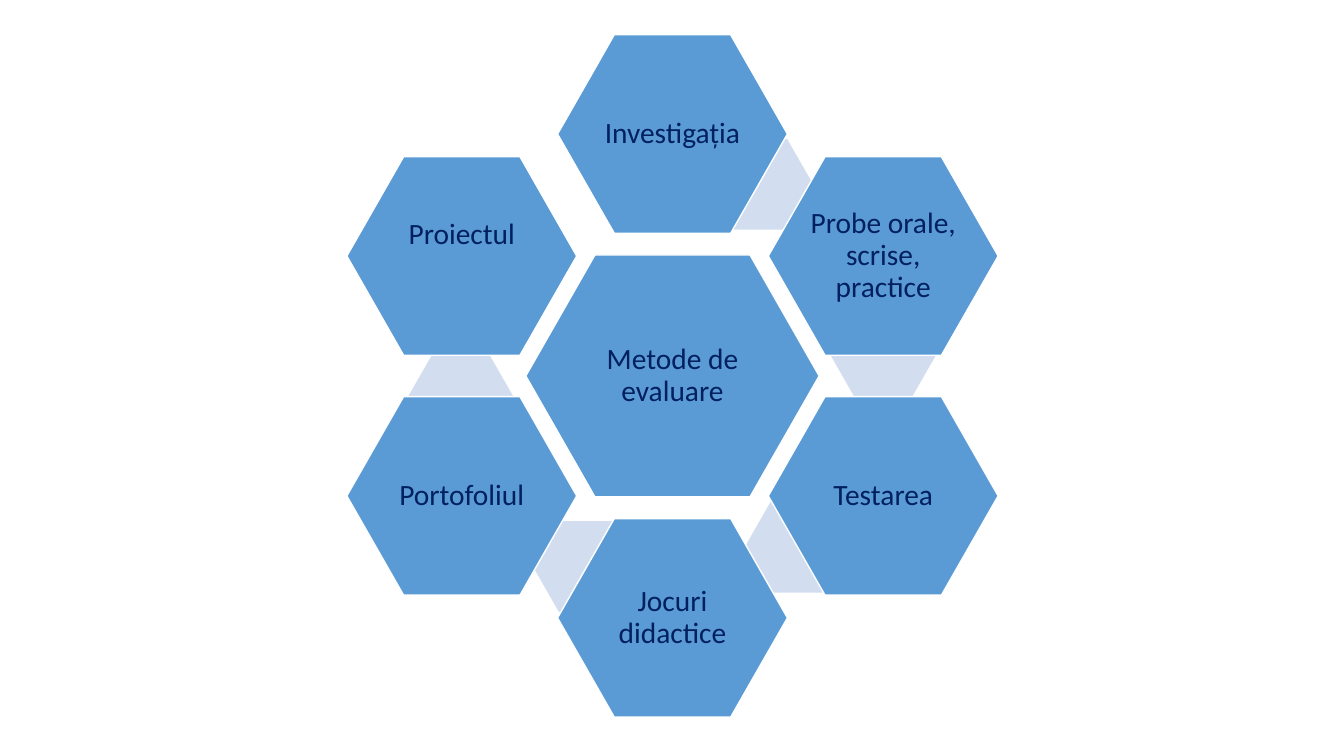
"""Build a slide with six evaluation methods in hexagons around a central one."""
from pptx import Presentation
from pptx.dml.color import RGBColor
from pptx.enum.shapes import MSO_SHAPE
from pptx.enum.text import MSO_ANCHOR, PP_ALIGN
from pptx.util import Inches, Pt

BLUE = RGBColor(0x5B, 0x9B, 0xD5)
PALE_BLUE = RGBColor(0xD2, 0xDE, 0xEF)
NAVY = RGBColor(0x00, 0x20, 0x60)
WHITE = RGBColor(0xFF, 0xFF, 0xFF)

CENTER_X, CENTER_Y = 6.67, 3.73
COLUMN, NEAR_ROW, FAR_ROW = 2.09, 1.19, 2.4
INSET = 0.03


def add_hexagon(center_x, center_y, width, height, fill):
    hexagon = slide.shapes.add_shape(
        MSO_SHAPE.HEXAGON, Inches(center_x - width / 2), Inches(center_y - height / 2),
        Inches(width), Inches(height))
    hexagon.adjustments[0] = 0.2857
    hexagon.shadow.inherit = False
    hexagon.fill.solid()
    hexagon.fill.fore_color.rgb = fill
    hexagon.line.fill.background()
    return hexagon


def add_method(name, center_x, center_y, width, height, bottom_inset=INSET):
    method = add_hexagon(center_x, center_y, width, height, BLUE)
    method.line.color.rgb = WHITE
    method.line.width = Pt(1)
    frame = method.text_frame
    frame.word_wrap = True
    frame.vertical_anchor = MSO_ANCHOR.MIDDLE
    frame.margin_left = frame.margin_right = frame.margin_top = Inches(INSET)
    frame.margin_bottom = Inches(bottom_inset)
    paragraph = frame.paragraphs[0]
    paragraph.alignment = PP_ALIGN.CENTER
    paragraph.line_spacing = 0.9
    run = paragraph.add_run()
    run.text = name
    run.font.name = "Calibri"
    run.font.size = Pt(21)
    run.font.color.rgb = NAVY


prs = Presentation()
prs.slide_width, prs.slide_height = Inches(13.33), Inches(7.5)
slide = prs.slides.add_slide(prs.slide_layouts[6])

add_method("Metode de evaluare", CENTER_X, CENTER_Y, 2.91, 2.4)

methods = [
    ("Investigația", 0, -FAR_ROW, (7.54, 1.83), INSET),
    ("Probe orale, scrise, practice", COLUMN, -NEAR_ROW, (8.76, 3.52), INSET),
    ("Testarea", COLUMN, NEAR_ROW, (7.91, 5.43), INSET),
    ("Jocuri didactice", 0, FAR_ROW, (5.81, 5.62), INSET),
    ("Portofoliul", -COLUMN, NEAR_ROW, (4.57, 3.94), INSET),
    ("Proiectul", -COLUMN, -NEAR_ROW, None, 0.45),
]
for name, offset_x, offset_y, link_center, bottom_inset in methods:
    if link_center:
        add_hexagon(*link_center, 1.05, 0.9, PALE_BLUE)
    add_method(name, CENTER_X + offset_x, CENTER_Y + offset_y, 2.28, 1.97, bottom_inset)

prs.save("out.pptx")
